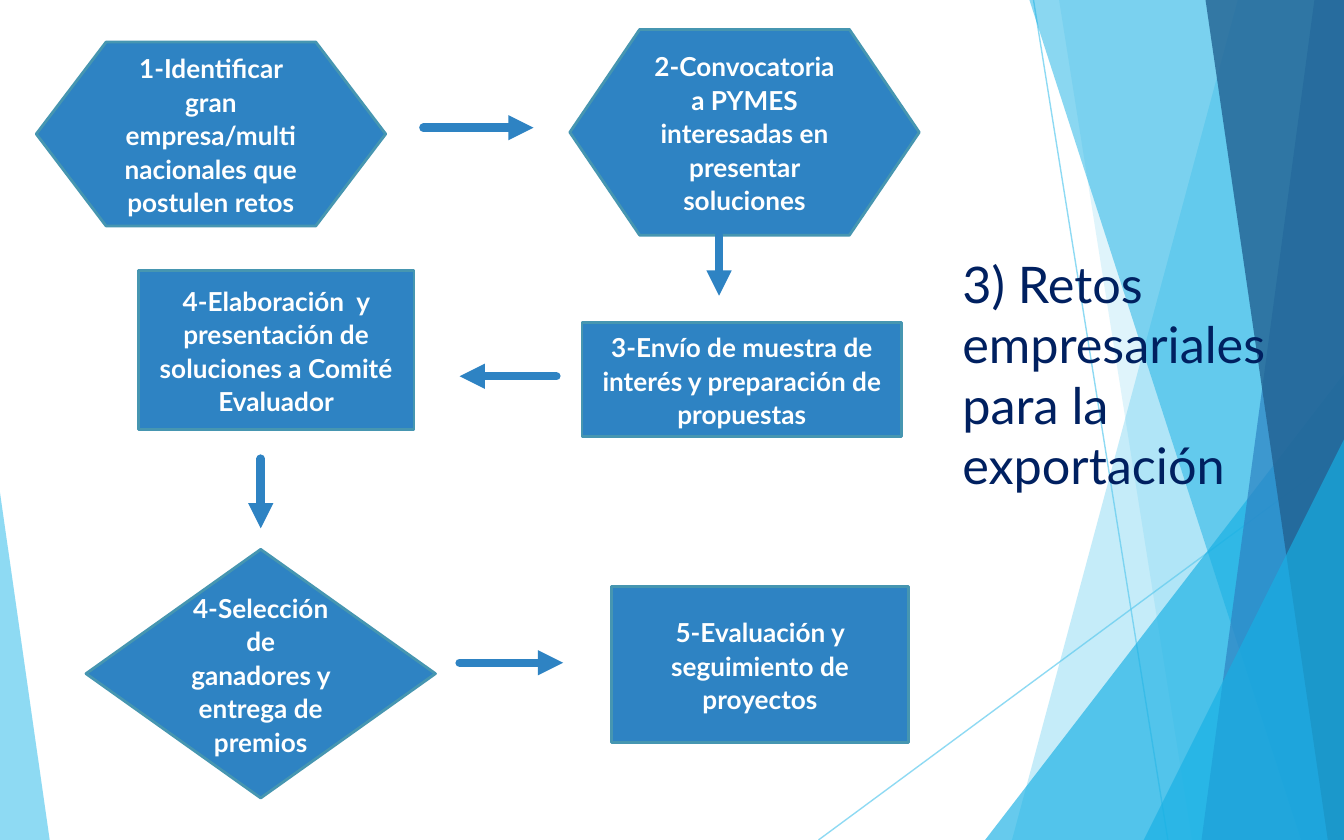
from lxml import etree
from pptx import Presentation
from pptx import util as u
from pptx.dml.color import RGBColor
from pptx.enum import shapes, text
from pptx.oxml.ns import qn

THEME = {
    "font": "Lato",
    "title_size": 27, "box_size": 14,
    "title": "002060", "box_text": "FFFFFF",
    "box": "2E83C3", "border": "4696B1",
    "pale": "5FCBEF", "cyan": "17B0E4", "blue": "2E83C3", "navy": "226292",
}
WIDTH, HEIGHT = u.Inches(10), u.Inches(6.25)

# All positions are percentages of the slide's width and height.
TITLE = ("3) Retos empresariales para la exportación", (70.6, 29.3, 27.3, 61))

# Background rays: start, end
RAYS = [((76.9, 0), (86.9, 100)), ((100, 53.8), (60.9, 100))]

# Bands reach the right edge: ("band", left at top, left at bottom, colour, opacity)
# Wedges stand on the bottom edge: ("wedge", left, top, width, peak, colour, opacity)
FACETS = [
    ("band", 92.1, 75.3, "pale", 36),
    ("band", 78.8, 88.7, "pale", 20),
    ("wedge", 73.3, 44.5, 26.7, 1, "cyan", 66),
    ("band", 76.6, 96.8, "cyan", 50),
    ("band", 97.8, 89.4, "blue", 70),
    ("band", 89.7, 98.8, "navy", 80),
    ("wedge", 85.1, 52.3, 14.9, 1, "cyan", 66),
    ("wedge", 0, 58.6, 3.7, 0, "pale", 70),
]

KINDS = {
    "preparation": shapes.MSO_SHAPE.FLOWCHART_PREPARATION,
    "process": shapes.MSO_SHAPE.FLOWCHART_PROCESS,
    "decision": shapes.MSO_SHAPE.FLOWCHART_DECISION,
}
STEPS = [
    ("preparation", (2.7, 5, 26, 21.9),
     "1-Identificar gran empresa/multinacionales que postulen retos"),
    ("preparation", (42.4, 3.5, 26, 24.5),
     "2-Convocatoria a PYMES interesadas en presentar soluciones"),
    ("process", (43.3, 38.4, 23.8, 13.6),
     "3-Envío de muestra de interés y preparación de propuestas"),
    ("process", (10.3, 32.2, 20.5, 18.9),
     "4-Elaboración  y presentación de soluciones a Comité Evaluador"),
    ("decision", (6.4, 65.4, 26, 29.6),
     "4-Selección de ganadores y entrega de premios"),
    ("process", (45.5, 69.8, 22.1, 18.6),
     "5-Evaluación y seguimiento de proyectos"),
]
ARROWS = [
    ((31.5, 15.2), (39.7, 15.2)),
    ((53.5, 28), (53.5, 35.2)),
    ((41.4, 44.8), (34.2, 44.8)),
    ((19.4, 54.6), (19.4, 62.9)),
    ((34.2, 78.9), (41.9, 78.9)),
]


def place(*shares):
    """Turn alternating x and y percentages into lengths."""
    return [int((HEIGHT if i % 2 else WIDTH) * share / 100)
            for i, share in enumerate(shares)]


def colour(name):
    return RGBColor.from_string(THEME[name])


def set_opacity(element, percent):
    rgb = next(element.iter(qn("a:srgbClr")))
    etree.SubElement(rgb, qn("a:alpha"), val=str(percent * 1000))


def paint(sp, fill):
    sp.shadow.inherit = False
    sp.fill.solid()
    sp.fill.fore_color.rgb = colour(fill)


def write(tf, words, paragraph, font, ink):
    tf.word_wrap = True
    p = tf.paragraphs[0]
    for name, value in paragraph.items():
        setattr(p, name, value)
    r = p.add_run()
    r.text = words
    for name, value in font.items():
        setattr(r.font, name, value)
    r.font.name = THEME["font"]
    r.font.color.rgb = colour(ink)


def add_line(s, start, end, ink, width):
    """Draw a straight line and return its a:ln element."""
    line = s.shapes.add_connector(shapes.MSO_CONNECTOR.STRAIGHT, *place(*start, *end))
    line.line.color.rgb = colour(ink)
    line.line.width = u.Pt(width)
    properties = line.element.spPr
    etree.SubElement(properties, qn("a:effectLst"))
    return properties.find(qn("a:ln"))


def add_facet(s, kind, *measures):
    *measures, fill, opacity = measures
    if kind == "band":
        top, bottom = measures
        corners = [place(*c) for c in ((top, 0), (100, 0), (100, 100), (bottom, 100))]
        builder = s.shapes.build_freeform(*corners[0])
        builder.add_line_segments(corners[1:], close=True)
        sp = builder.convert_to_shape()
    else:
        left, top, width, peak = measures
        sp = s.shapes.add_shape(shapes.MSO_SHAPE.ISOSCELES_TRIANGLE,
                                *place(left, top, width, 100 - top))
        sp.adjustments[0] = peak
    paint(sp, fill)
    sp.line.fill.background()
    set_opacity(sp.element.spPr, opacity)


def add_title(s):
    words, box = TITLE
    title = s.shapes.title
    title.left, title.top, title.width, title.height = place(*box)
    tf = title.text_frame
    tf.auto_size = text.MSO_AUTO_SIZE.NONE
    tf.vertical_anchor = text.MSO_ANCHOR.TOP
    write(tf, words, {"alignment": text.PP_ALIGN.LEFT},
          {"size": u.Pt(THEME["title_size"])}, "title")
    title.element.getparent().append(title.element)  # in front of the facets


def add_step(s, kind, box, words):
    sp = s.shapes.add_shape(KINDS[kind], *place(*box))
    paint(sp, "box")
    sp.line.color.rgb = colour("border")
    sp.line.width = u.Pt(1.5)
    sp.text_frame.vertical_anchor = text.MSO_ANCHOR.MIDDLE
    write(sp.text_frame, words,
          {"alignment": text.PP_ALIGN.CENTER, "line_spacing": 1.07,
           "space_after": u.Pt(8)},
          {"size": u.Pt(THEME["box_size"]), "bold": True}, "box_text")


def add_arrow(s, start, end):
    ln = add_line(s, start, end, "box", 4.5)
    ln.set("cap", "rnd")
    etree.SubElement(ln, qn("a:tailEnd"), type="triangle")


def main():
    prs = Presentation()
    prs.slide_width, prs.slide_height = WIDTH, HEIGHT
    s = prs.slides.add_slide(prs.slide_layouts.get_by_name("Title Only"))
    for start, end in RAYS:
        set_opacity(add_line(s, start, end, "pale", 0.75), 70)
    for facet in FACETS:
        add_facet(s, *facet)
    add_title(s)
    for step in STEPS:
        add_step(s, *step)
    for arrow in ARROWS:
        add_arrow(s, *arrow)
    prs.save("out.pptx")


if __name__ == "__main__":
    main()
